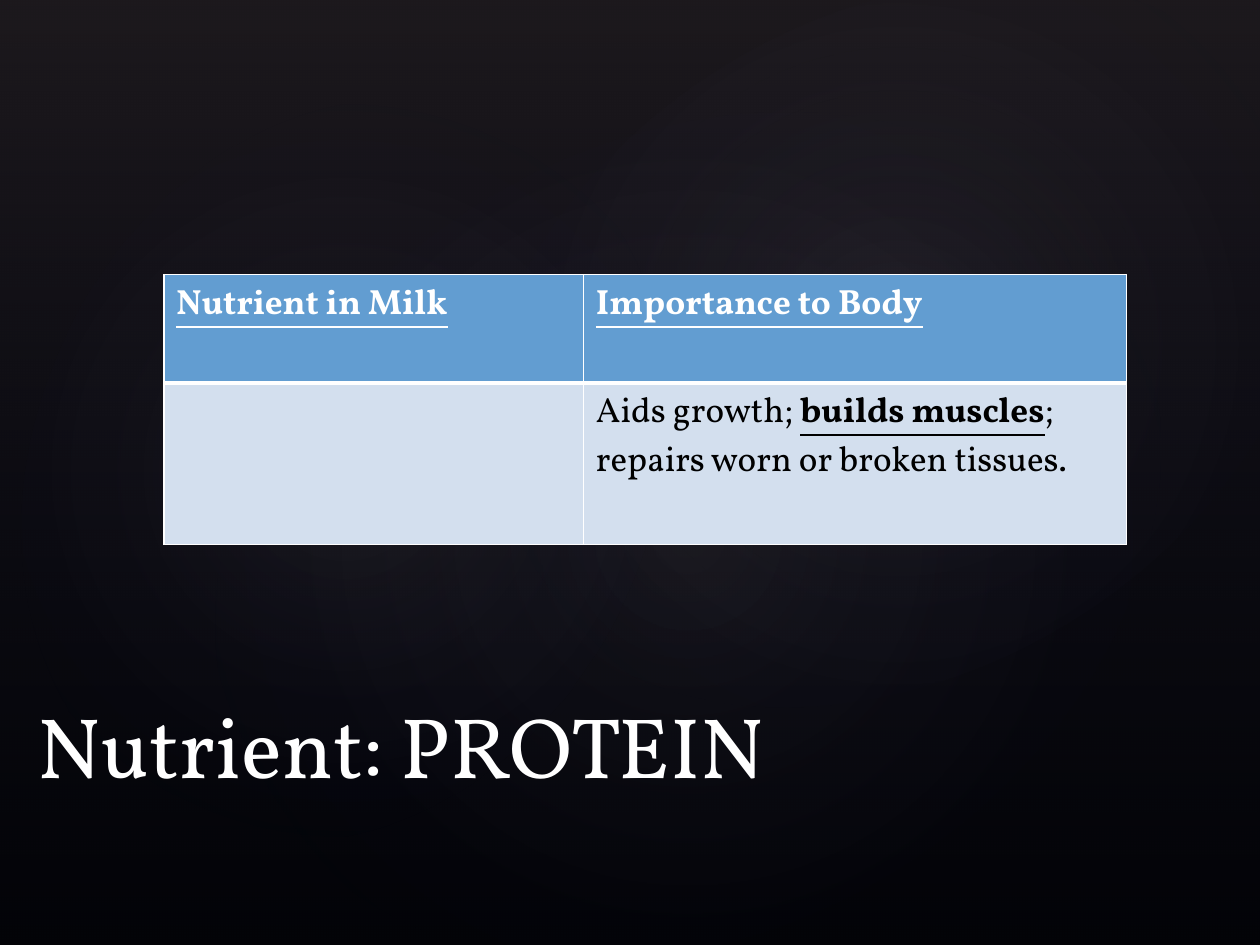
from lxml import etree
from pptx import Presentation
from pptx import util as u
from pptx.dml.color import RGBColor
from pptx.enum import shapes, text
from pptx.oxml import ns

FONT = "Vollkorn"
BLACK = RGBColor(0, 0, 0)
WHITE = RGBColor(255, 255, 255)
BLUE = RGBColor(0x62, 0x9D, 0xD1)
PALE = RGBColor(0xD3, 0xDF, 0xEE)
NAVY = RGBColor(0x24, 0x28, 0x52)
PLUM = RGBColor(0x50, 0x46, 0x52)
MIST = RGBColor(0xC4, 0xBC, 0xC6)

# Glow ellipses: left, top, width, height, rotation, centre opacity
GLOWS = [
    (1.5, 1.14, 7.92, 6.24, 328.7, 7),
    (-0.3, 1.28, 6.06, 4.9, 294.3, 8),
    (3.58, 0.13, 7.09, 5.2, 328.7, 8),
]
# Each cell is a list of (words, stressed) runs
ROWS = [
    [[("Nutrient in Milk", True)], [("Importance to Body", True)]],
    [[], [("Aids growth; ", False), ("builds muscles", True),
          ("; repairs worn or broken tissues.", False)]],
]


def node(parent, tag, **attrs):
    return etree.SubElement(parent, ns.qn(tag), {k: str(v) for k, v in attrs.items()})


def fade(shape, stops, radial=False):
    """Fill with a gradient of (position %, colour, opacity %) stops."""
    shape.fill.background()
    props = shape.element.spPr
    old = props.find(ns.qn("a:noFill"))
    grad = etree.Element(ns.qn("a:gradFill"), rotWithShape="1")
    props.replace(old, grad)
    group = node(grad, "a:gsLst")
    for pos, color, alpha in stops:
        stop = node(group, "a:gs", pos=pos * 1000)
        tint = node(stop, "a:srgbClr", val=color)
        node(tint, "a:alpha", val=alpha * 1000)
    if radial:
        path = node(grad, "a:path", path="circle")
        node(path, "a:fillToRect", l=50000, t=50000, r=50000, b=50000)
    else:
        node(grad, "a:lin", ang=90 * 60000, scaled=0)


def add_glow(slide, kind, box, stops, turn=0, radial=False):
    shape = slide.shapes.add_shape(kind, *map(u.Inches, box))
    shape.rotation = turn
    shape.shadow.inherit = False
    shape.line.fill.background()
    fade(shape, stops, radial)


def set_title(slide, words):
    title = slide.shapes.title
    slide.shapes.element.append(title.element)  # in front of the glows
    title.left, title.top = u.Inches(0.2), u.Inches(5.33)
    title.width, title.height = u.Inches(9.21), u.Inches(1)
    frame = title.text_frame
    frame.text = words
    frame.auto_size = text.MSO_AUTO_SIZE.NONE
    frame.vertical_anchor = text.MSO_ANCHOR.TOP
    frame.margin_top = u.Inches(0.17)
    para = frame.paragraphs[0]
    para.alignment = text.PP_ALIGN.LEFT
    para.font.name, para.font.size = FONT, u.Pt(49)
    para.font.color.rgb = WHITE


def set_edges(cell, top, foot):
    """White borders; top and foot widths in points, sides 1 pt."""
    props = cell._tc.get_or_add_tcPr()
    widths = {"a:lnL": 1, "a:lnR": 1, "a:lnT": top, "a:lnB": foot}
    for spot, (tag, width) in enumerate(widths.items()):
        line = etree.Element(ns.qn(tag), w=str(u.Pt(width)))
        node(node(line, "a:solidFill"), "a:srgbClr", val=WHITE)
        props.insert(spot, line)


def fill_cell(cell, runs, head):
    cell.fill.solid()
    cell.fill.fore_color.rgb = BLUE if head else PALE
    para = cell.text_frame.paragraphs[0]
    para.font.name, para.font.size = FONT, u.Pt(20)
    para.font.color.rgb = WHITE if head else BLACK
    for words, stress in runs:
        run = para.add_run()
        run.text = words
        run.font.bold = run.font.underline = stress
    set_edges(cell, 1 if head else 3, 3 if head else 1)


def add_grid(slide):
    wide, high = (3.33, 4.31), (0.86, 1.28)
    box = (1.3, 2.18, sum(wide), sum(high))
    grid = slide.shapes.add_table(len(high), len(wide), *map(u.Inches, box)).table
    for col, size in zip(grid.columns, wide):
        col.width = u.Inches(size)
    for row, size, cells in zip(grid.rows, high, ROWS):
        row.height = u.Inches(size)
        for cell, runs in zip(row.cells, cells):
            fill_cell(cell, runs, cells is ROWS[0])


def main():
    deck = Presentation()
    deck.slide_width, deck.slide_height = u.Inches(10), u.Inches(7.5)
    slide = deck.slides.add_slide(deck.slide_layouts[5])

    # Dark backdrop with soft glows
    slide.background.fill.solid()
    slide.background.fill.fore_color.rgb = BLACK
    add_glow(slide, shapes.MSO_SHAPE.RECTANGLE, (0, 0, 10, 7.5),
             [(0, PLUM, 36), (100, NAVY, 10)])
    for *box, turn, alpha in GLOWS:
        add_glow(slide, shapes.MSO_SHAPE.OVAL, box,
                 [(0, MIST, alpha), (58, NAVY, 0)], turn, radial=True)

    # Content
    set_title(slide, "Nutrient: PROTEIN")
    add_grid(slide)
    deck.save("out.pptx")


if __name__ == "__main__":
    main()
